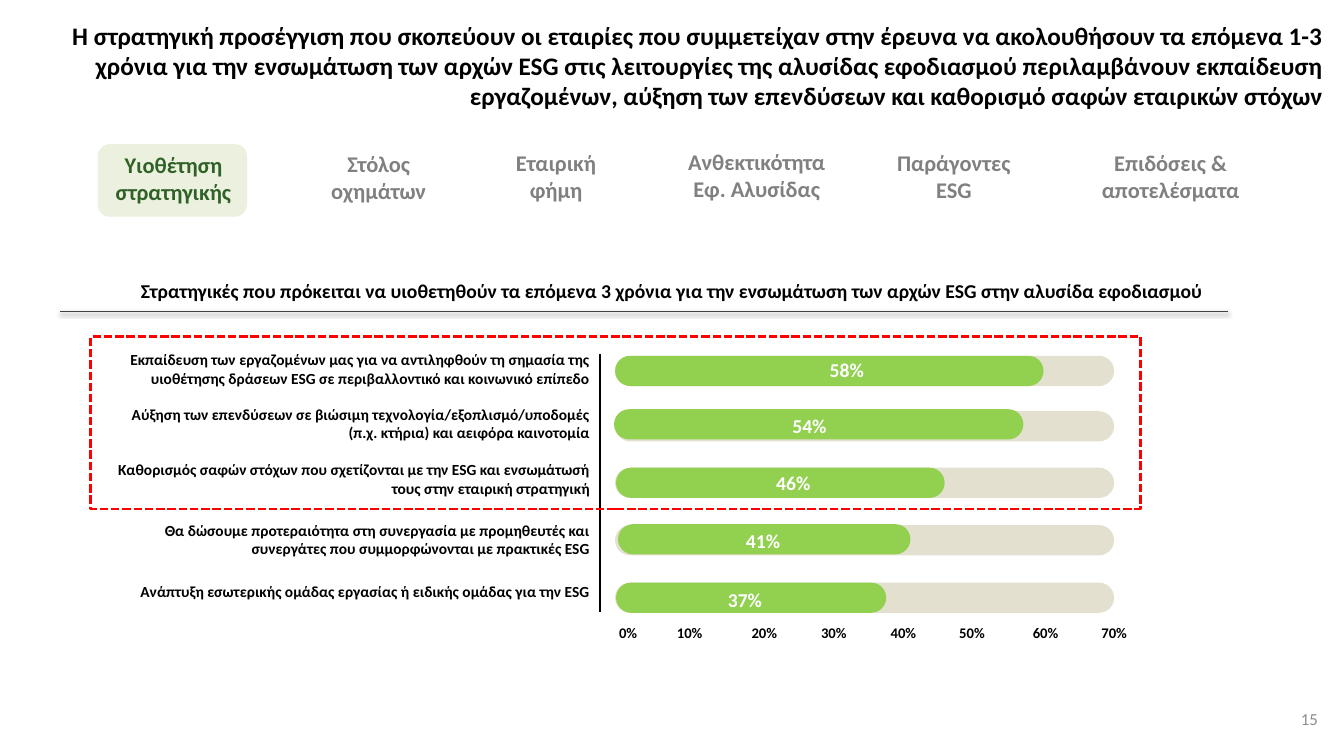
from lxml import etree
from pptx import Presentation
from pptx.dml.color import RGBColor
from pptx.enum.dml import MSO_LINE
from pptx.enum.shapes import MSO_CONNECTOR, MSO_SHAPE
from pptx.enum.text import MSO_ANCHOR, PP_ALIGN
from pptx.oxml.ns import qn
from pptx.util import Inches, Pt

LEFT, CENTER, RIGHT = PP_ALIGN.LEFT, PP_ALIGN.CENTER, PP_ALIGN.RIGHT
TOP, MIDDLE = MSO_ANCHOR.TOP, MSO_ANCHOR.MIDDLE
RECTANGLE, ROUNDED = MSO_SHAPE.RECTANGLE, MSO_SHAPE.ROUNDED_RECTANGLE
STRAIGHT = MSO_CONNECTOR.STRAIGHT
DASH = MSO_LINE.SQUARE_DOT

FONT = "Calibri"
BLACK, WHITE, GREY, RED = "000000", "FFFFFF", "808080", "FF0000"
GREEN, DARK_GREEN, PALE_GREEN, BEIGE = "92D050", "306228", "EBF1DE", "DDD9C3"

TITLE = ("H στρατηγική προσέγγιση που σκοπεύουν οι εταιρίες που συμμετείχαν στην έρευνα "
         "να ακολουθήσουν τα επόμενα 1-3 χρόνια για την ενσωμάτωση των αρχών ESG στις "
         "λειτουργίες της αλυσίδας εφοδιασμού περιλαμβάνουν εκπαίδευση εργαζομένων, "
         "αύξηση των επενδύσεων και καθορισμό σαφών εταιρικών στόχων")
CHART_TITLE = ("Στρατηγικές που πρόκειται να υιοθετηθούν τα επόμενα 3 χρόνια για την "
               "ενσωμάτωση των αρχών ESG στην αλυσίδα εφοδιασμού")

# Text, left, top, width, colour
TABS = [
    ("Υιοθέτηση στρατηγικής", 0.68, 1.45, 2.08, DARK_GREEN),
    ("Στόλος\nοχημάτων", 2.83, 1.44, 1.85, GREY),
    ("Εταιρική\nφήμη", 4.59, 1.43, 1.85, GREY),
    ("Ανθεκτικότητα\nΕφ. Αλυσίδας", 6.58, 1.42, 1.85, GREY),
    ("Παράγοντες\nESG", 8.42, 1.43, 2.08, GREY),
    ("Επιδόσεις &\nαποτελέσματα", 10.57, 1.43, 2.08, GREY),
]

# Label, label top, track top, bar left, bar top, bar width, value, value left, value top
STRATEGIES = [
    ("Εκπαίδευση των εργαζομένων μας για να αντιληφθούν τη σημασία της υιοθέτησης "
     "δράσεων ESG σε περιβαλλοντικό και κοινωνικό επίπεδο",
     3.44, 3.53, 6.1, 3.53, 4.25, "58%", 8.13, 3.5),
    ("Αύξηση των επενδύσεων σε βιώσιμη τεχνολογία/εξοπλισμό/υποδομές (π.χ. κτήρια) "
     "και αειφόρα καινοτομία",
     3.98, 4.08, 6.09, 4.06, 4.06, "54%", 7.76, 4.06),
    ("Καθορισμός σαφών στόχων που σχετίζονται με την ESG και ενσωμάτωσή τους στην "
     "εταιρική στρατηγική",
     4.53, 4.64, 6.11, 4.64, 3.26, "46%", 7.6, 4.62),
    ("Θα δώσουμε προτεραιότητα στη συνεργασία με προμηθευτές και συνεργάτες που "
     "συμμορφώνονται με πρακτικές ESG",
     5.13, 5.21, 6.13, 5.2, 2.9, "41%", 7.3, 5.2),
    ("Ανάπτυξη εσωτερικής ομάδας εργασίας ή ειδικής ομάδας για την ESG",
     5.65, 5.78, 6.11, 5.78, 2.68, "37%", 7.12, 5.78),
]
AXIS_CENTERS = [6.23, 6.84, 7.58, 8.27, 8.96, 9.64, 10.37, 11.05]


def color(hex_code):
    return RGBColor.from_string(hex_code)


class SlideBuilder:
    """Holds the font and the slide that receives each element."""

    def __init__(self, slide, font):
        self.slide = slide
        self.font = font

    def text(self, text, left, top, width, height, *, size, fill=BLACK, bold=True,
             align=LEFT, anchor=TOP, wrap=True, spacing=None):
        box = self.slide.shapes.add_textbox(
            Inches(left), Inches(top), Inches(width), Inches(height))
        frame = box.text_frame
        frame.word_wrap = wrap
        frame.vertical_anchor = anchor
        frame.text = text
        for paragraph in frame.paragraphs:
            paragraph.alignment = align
            paragraph.line_spacing = spacing
            font = paragraph.font
            font.name, font.size, font.bold = self.font, Pt(size), bold
            font.color.rgb = color(fill)

    def box(self, kind, left, top, width, height, fill=None, opacity=None):
        shape = self.slide.shapes.add_shape(
            kind, Inches(left), Inches(top), Inches(width), Inches(height))
        shape.shadow.inherit = False
        shape.line.fill.background()
        if fill is None:
            shape.fill.background()
            return shape
        shape.fill.solid()
        shape.fill.fore_color.rgb = color(fill)
        if opacity is not None:
            rgb = shape._element.spPr.find(".//" + qn("a:srgbClr"))
            etree.SubElement(rgb, qn("a:alpha"), val=str(opacity * 1000))
        return shape

    def pill(self, left, top, width, height, fill, opacity=None):
        shape = self.box(ROUNDED, left, top, width, height, fill, opacity)
        shape.adjustments[0] = 0.5

    def dashed_frame(self, left, top, width, height, line_color, line_width):
        shape = self.box(RECTANGLE, left, top, width, height)
        shape.line.color.rgb = color(line_color)
        shape.line.width = Pt(line_width)
        shape.line.dash_style = DASH

    def line(self, start, end, line_color, line_width, shadow=False):
        connector = self.slide.shapes.add_connector(
            STRAIGHT, *(Inches(value) for value in (*start, *end)))
        connector.line.color.rgb = color(line_color)
        connector.line.width = Pt(line_width)
        effects = etree.SubElement(connector._element.spPr, qn("a:effectLst"))
        if shadow:
            outer = etree.SubElement(
                effects, qn("a:outerShdw"), blurRad=str(Pt(3.1)), dist=str(Pt(1.6)),
                dir="5400000", rotWithShape="0")
            rgb = etree.SubElement(outer, qn("a:srgbClr"), val=BLACK)
            etree.SubElement(rgb, qn("a:alpha"), val="38000")


def main():
    presentation = Presentation()
    presentation.slide_width = Inches(13.33)
    presentation.slide_height = Inches(7.5)
    slide = presentation.slides.add_slide(presentation.slide_layouts[6])
    builder = SlideBuilder(slide, FONT)

    builder.box(ROUNDED, 0.97, 1.43, 1.48, 0.72, PALE_GREEN)
    builder.text(TITLE, 0.1, 0.15, 13.12, 1.01, size=18, align=RIGHT)
    for label, left, top, width, fill in TABS:
        builder.text(label, left, top, width, 0.64, size=16, fill=fill, align=CENTER)

    builder.text(CHART_TITLE, 1.25, 2.72, 10.83, 0.34, size=14, align=CENTER, wrap=False)
    builder.line((0.6, 3.09), (12.18, 3.09), "404040", 0.75, shadow=True)

    builder.line((5.95, 3.51), (5.95, 6.07), BLACK, 1)
    for (label, label_top, track_top, bar_left, bar_top, bar_width,
         value, value_left, value_top) in STRATEGIES:
        builder.text(label, 1, label_top, 4.95, 0.44, size=11, align=RIGHT, anchor=MIDDLE)
        builder.pill(6.1, track_top, 4.95, 0.3, BEIGE, opacity=80)
        builder.pill(bar_left, bar_top, bar_width, 0.3, GREEN)
        builder.text(value, value_left, value_top, 0.55, 0.34, size=14, fill=WHITE)

    for index, center in enumerate(AXIS_CENTERS):
        builder.text(f"{index * 10}%", center - 0.41, 6.15, 0.82, 0.28,
                     size=10.5, align=CENTER, spacing=0.95)
    builder.dashed_frame(0.9, 3.34, 10.41, 1.71, RED, 2)
    builder.text("15", 10.84, 6.93, 2.33, 0.4, size=12, fill="8C8C8C", bold=False,
                 align=RIGHT, anchor=MIDDLE)

    presentation.save("out.pptx")


if __name__ == "__main__":
    main()
